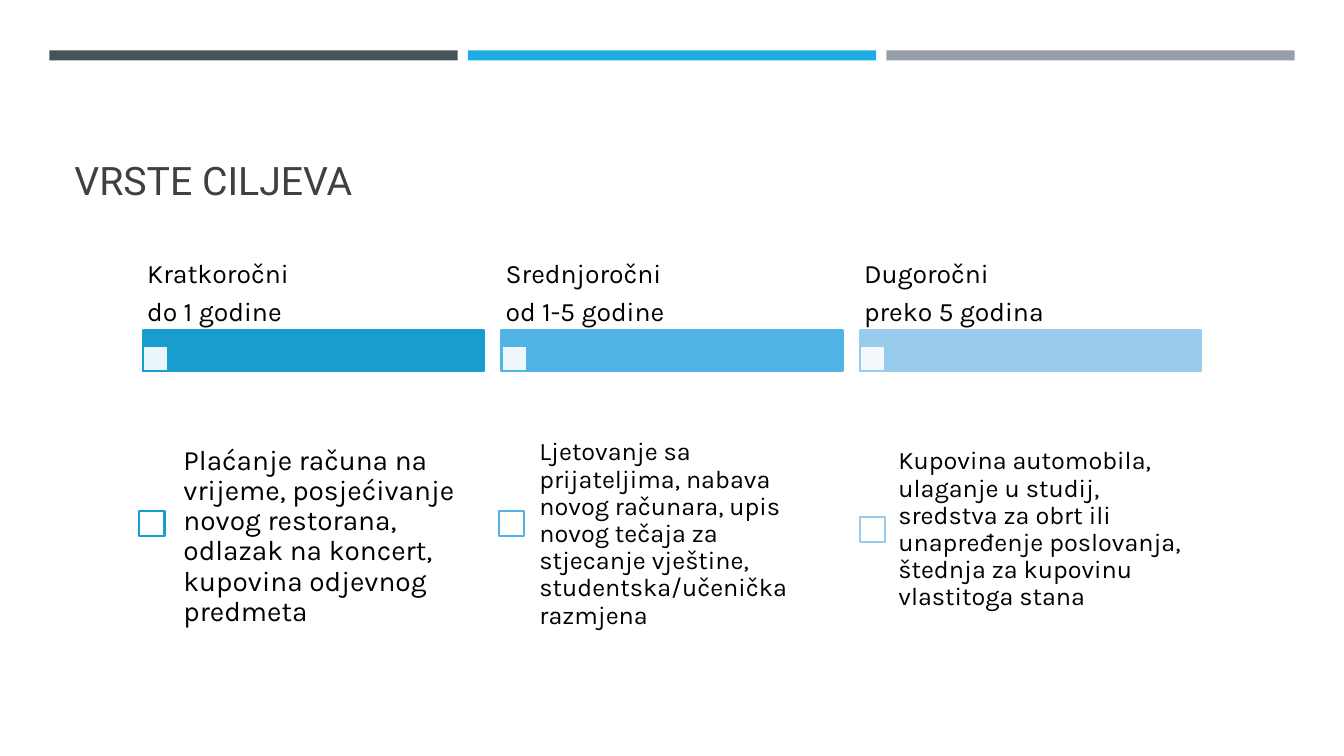
import pptx
import pptx.dml.color
import pptx.enum.shapes
import pptx.enum.text
import pptx.util
from lxml import etree
from pptx.util import Inches

MIDDLE = pptx.enum.text.MSO_ANCHOR.MIDDLE
BOTTOM = pptx.enum.text.MSO_ANCHOR.BOTTOM

presentation = pptx.Presentation()
presentation.slide_width = Inches(13.33)
presentation.slide_height = Inches(7.5)
slide = presentation.slides.add_slide(presentation.slide_layouts[6])


def add_box(left, top, width, height, fill, outline=None, opacity=100):
    box = slide.shapes.add_shape(
        pptx.enum.shapes.MSO_SHAPE.RECTANGLE,
        Inches(left), Inches(top), Inches(width), Inches(height))
    box.shadow.inherit = False
    box.fill.solid()
    box.fill.fore_color.rgb = pptx.dml.color.RGBColor.from_string(fill)
    if opacity < 100:
        color = box.fill._xPr.find(".//" + pptx.oxml.ns.qn("a:srgbClr"))
        etree.SubElement(color, pptx.oxml.ns.qn("a:alpha"), val=str(opacity * 1000))
    if outline:
        box.line.color.rgb = pptx.dml.color.RGBColor.from_string(outline)
        box.line.width = pptx.util.Pt(1.75)
    else:
        box.line.fill.background()


def add_text(left, top, width, height, lines, size, font, color, anchor,
             inset_x, inset_y, line_spacing=1.0, space_after=0):
    frame = slide.shapes.add_textbox(
        Inches(left), Inches(top), Inches(width), Inches(height)).text_frame
    frame.word_wrap = True
    frame.vertical_anchor = anchor
    frame.margin_left = frame.margin_right = Inches(inset_x)
    frame.margin_top = frame.margin_bottom = Inches(inset_y)
    for index, line in enumerate(lines):
        paragraph = frame.add_paragraph() if index else frame.paragraphs[0]
        paragraph.line_spacing = line_spacing
        paragraph.space_after = pptx.util.Pt(space_after)
        run = paragraph.add_run()
        run.text = line
        run.font.size = pptx.util.Pt(size)
        run.font.name = font
        run.font.color.rgb = pptx.dml.color.RGBColor.from_string(color)


for index, band_color in enumerate(["465359", "1CADE4", "969FA7"]):
    add_box(0.49 + 4.15 * index, 0.5, 4.05, 0.1, band_color)

add_text(0.64, 0.77, 12.06, 1.3, ["VRSTE CILJEVA"], 28, "Roboto", "404040",
         BOTTOM, 0.1, 0.05)

goals = [
    ("199DCF", ["Kratkoročni", "do 1 godine"],
     "Plaćanje računa na vrijeme, posjećivanje novog restorana, "
     "odlazak na koncert, kupovina odjevnog predmeta",
     20, 0.16, 1.38, 5.07, 1.66, 2.97),
    ("52B3E5", ["Srednjoročni", "od 1-5 godine"],
     "Ljetovanje sa prijateljima, nabava novog računara, upis novog tečaja "
     "za stjecanje vještine, studentska/učenička razmjena",
     18, 0.14, 4.95, 5.07, 5.21, 2.92),
    ("99CBEC", ["Dugoročni", "preko 5 godina"],
     "Kupovina automobila, ulaganje u studij, sredstva za obrt ili "
     "unapređenje poslovanja, štednja za kupovinu vlastitoga stana",
     18, 0.14, 8.53, 5.13, 8.77, 2.83),
]

for index, (color, heading, examples, size, inset, bullet_left, bullet_top,
            examples_left, examples_height) in enumerate(goals):
    left = 1.42 + 3.555 * index
    add_box(left, 3.28, 3.38, 0.4, color, color)
    add_box(left, 3.43, 0.25, 0.25, "FFFFFF", color, 90)
    add_text(left, 2.56, 3.38, 0.72, heading, 19, "Karla", "000000",
             MIDDLE, 0.04, 0.03, 0.9, 0.35 * 19)
    add_box(bullet_left, bullet_top, 0.25, 0.25, "FFFFFF", color)
    add_text(examples_left, 3.84, 3.15, examples_height, [examples], size,
             "Karla", "000000", MIDDLE, inset, inset, 0.9, 0.35 * size)

presentation.save("out.pptx")
